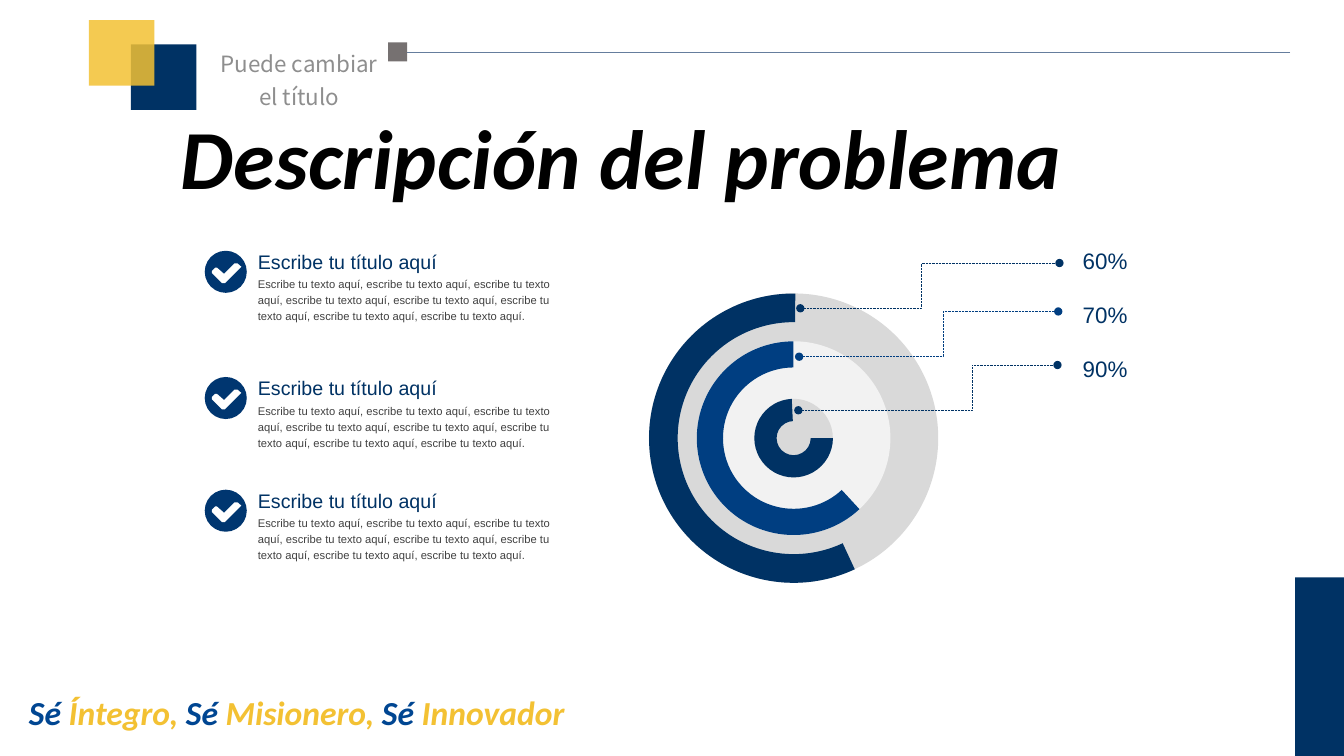
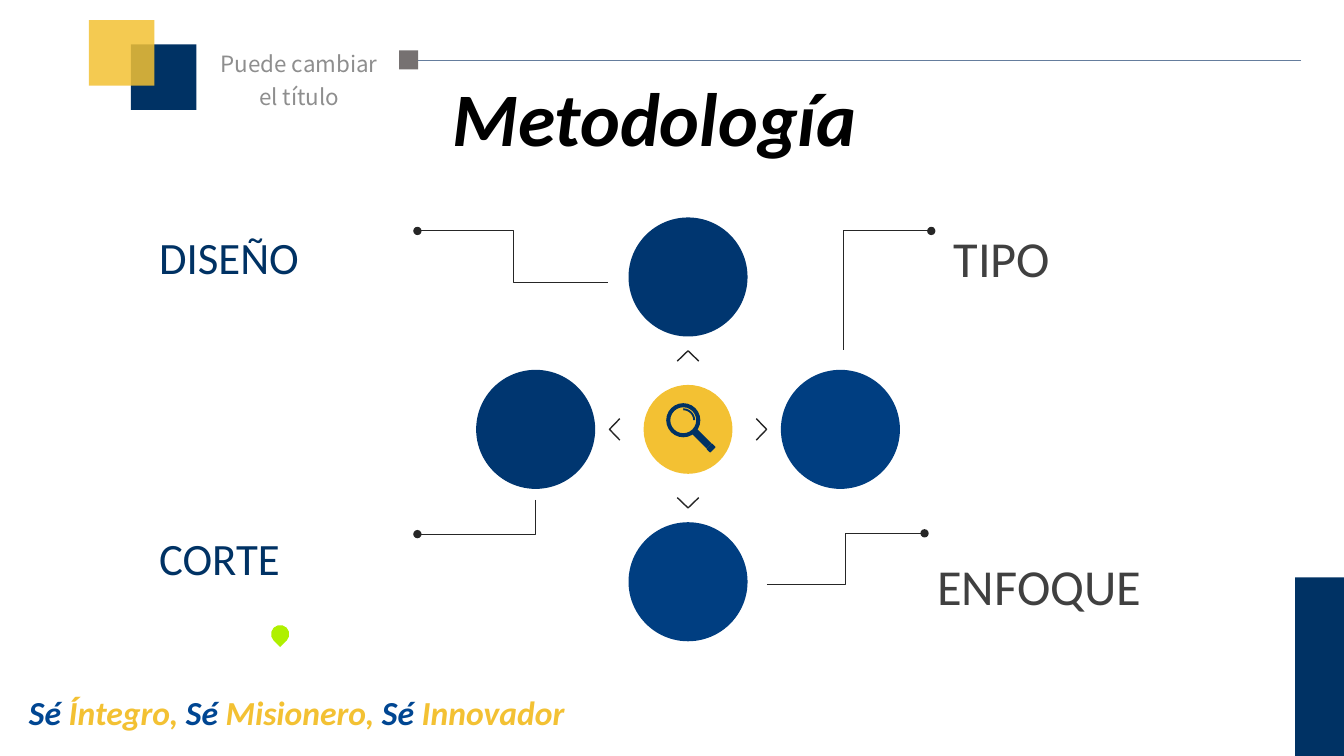
from dataclasses import dataclass

from lxml.etree import SubElement as Sub
from pptx import Presentation as Deck
from pptx.dml.color import RGBColor as Rgb
from pptx.enum.dml import MSO_LINE_DASH_STYLE as Dash
from pptx.enum.shapes import MSO_CONNECTOR as Link, MSO_SHAPE as Kind
from pptx.enum.text import MSO_ANCHOR as Anchor, MSO_AUTO_SIZE as Auto, PP_ALIGN as Align
from pptx.oxml.ns import qn
from pptx.util import Cm, Pt


@dataclass(frozen=True)
class Theme:
    """Colours, fonts and type sizes of the deck."""
    navy: str = "003264"
    deep: str = "003670"
    blue: str = "003E81"
    motto: str = "004692"
    gold: str = "F3C133"
    lime: str = "AFF000"
    white: str = "FFFFFF"
    black: str = "000000"
    ink: str = "262626"
    body: str = "404040"
    stone: str = "767171"
    slate: str = "657D9D"
    mute: str = "8E8E8E"
    mist: str = "D9D9D9"
    pale: str = "F2F2F2"
    main: str = "Calibri"
    plain: str = "Arial"
    soft: str = "Noto Sans CJK SC"
    small: int = 8
    head: int = 14
    note: int = 16
    foot: int = 24
    label: int = 32
    large: int = 36
    title: int = 54
    huge: int = 60


T = Theme()
BOLD = {"bold": True, "italic": True}
GROW = {"auto_size": Auto.SHAPE_TO_FIT_TEXT}
FLUSH = dict.fromkeys(("margin_left", "margin_top", "margin_right", "margin_bottom"), 0)
TIGHT = {**FLUSH, **GROW}
NOWRAP = {"word_wrap": False}
LOW = {"vertical_anchor": Anchor.BOTTOM}
MID = {"alignment": Align.CENTER}
OPEN = {"line_spacing": 1.2}


def apply(obj, form):
    """Set every format value on an object."""
    for name, value in form.items():
        setattr(obj, name, value)


def size(box):
    """Turn a box in centimetres into lengths."""
    return [Cm(n) for n in box]


def paint(part, tone):
    """Give a shape a plain fill without line or shadow."""
    part.shadow.inherit = False
    part.fill.solid()
    part.fill.fore_color.rgb = Rgb.from_string(tone)
    part.line.fill.background()
    return part


def shape(slide, kind, box, tone, adj=(), turn=0):
    """Draw a filled preset shape."""
    part = paint(slide.shapes.add_shape(kind, *size(box)), tone)
    for i, value in enumerate(adj):
        part.adjustments[i] = value
    part.rotation = turn
    return part


def disc(slide, x, y, wide, tone):
    """Draw a circle around a centre."""
    return shape(slide, Kind.OVAL, (x - wide / 2, y - wide / 2, wide, wide), tone)


def text(slide, box, runs, font, para=None, frame=None):
    """Write coloured runs in one paragraph."""
    area = slide.shapes.add_textbox(*size(box)).text_frame
    apply(area, {"word_wrap": True, **(frame or {})})
    line = area.paragraphs[0]
    apply(line, para or {})
    for words, tone in runs:
        run = line.add_run()
        run.text = words
        apply(run.font, font)
        run.font.color.rgb = Rgb.from_string(tone)


def face(name, points, **more):
    """Describe a font."""
    return {"name": name, "size": Pt(points), **more}


def stroke(part, tone, width, ends=()):
    """Style a line and its round ends."""
    part.line.color.rgb = Rgb.from_string(tone)
    part.line.width = Pt(width)
    for end in ends:
        Sub(part.line._get_or_add_ln(), qn("a:" + end), type="oval")


def trace(slide, spots, close=False):
    """Build an outline through points in centimetres."""
    first, *rest = [(Cm(x), Cm(y)) for x, y in spots]
    pen = slide.shapes.build_freeform(*first)
    pen.add_line_segments(rest, close=close)
    part = pen.convert_to_shape()
    part.shadow.inherit = False
    return part


def wire(slide, spots, width, ends=()):
    """Draw an open dark line."""
    part = trace(slide, spots)
    part.fill.background()
    stroke(part, T.ink, width, ends)


def join(slide, kind, start, stop):
    """Add a connector without shadow."""
    link = slide.shapes.add_connector(kind, *size(start + stop))
    Sub(link._element.spPr, qn("a:effectLst"))
    return link


def rule(slide, x, y):
    """Draw the top line with its square."""
    side = 0.48
    line = join(slide, Link.STRAIGHT, (x + 22.73, y + side / 2), (x + side, y + side / 2))
    stroke(line, T.slate, 0.5)
    line.end_connect(shape(slide, Kind.RECTANGLE, (x, y, side, side), T.stone), 3)


def base(deck, spot, title, box, points):
    """Start a slide with the shared parts and its title."""
    slide = deck.slides.add_slide(deck.slide_layouts[6])
    rule(slide, *spot)
    text(slide, (5.33, 1.14, 4.42, 0.91), [("Puede cambiar el título", T.mute)],
         face(T.soft, T.note), {**MID, **OPEN}, FLUSH)
    shape(slide, Kind.RECTANGLE, (3.3, 1.12, 1.65, 1.65), T.navy)
    gold = shape(slide, Kind.RECTANGLE, (2.24, 0.51, 1.65, 1.65), T.gold)
    Sub(next(gold._element.iter(qn("a:srgbClr"))), qn("a:alpha"), val="85000")
    motto = []
    for word in (" Íntegro, ", " Misionero, ", " Innovador"):
        motto += [("Sé", T.motto), (word, T.gold)]
    text(slide, (0.48, 17.3, 14.12, 1.27), motto, face(T.main, T.foot, **BOLD),
         frame={**GROW, **NOWRAP})
    shape(slide, Kind.RECTANGLE, (32.64, 14.55, 1.23, 4.5), T.navy)
    text(slide, box, [(title, T.black)], face(T.main, points, **BOLD),
         {**MID, "line_spacing": 0.9}, LOW)
    return slide


def item(slide, x, y):
    """Place a check badge with heading and text."""
    side = 1.06
    shape(slide, Kind.OVAL, (x, y, side, side), T.deep)
    tick = [(0.87, 0.38), (0.78, 0.3), (0.71, 0.3), (0.46, 0.55), (0.29, 0.4), (0.25, 0.4),
            (0.17, 0.48), (0.17, 0.53), (0.41, 0.77), (0.48, 0.77), (0.83, 0.42)]
    paint(trace(slide, [(x + u * side, y + v * side) for u, v in tick], True), T.white)
    body = ", ".join(["Escribe tu texto aquí"] + ["escribe tu texto aquí"] * 7) + "."
    for dy, wide, high, words, tone, points, wrap in (
            (-0.15, 4.55, 0.66, "Escribe tu título aquí", T.navy, T.head, False),
            (0.61, 7.67, 1.19, body, T.body, T.small, True)):
        text(slide, (x + 1.34, y + dy, wide, high), [(words, tone)], face(T.plain, points),
             {**OPEN, "space_before": Pt(points * 0.2)}, {**TIGHT, "word_wrap": wrap})


def rings(slide, x, y):
    """Draw three progress rings around a centre."""
    rows = ((7.29, T.mist, T.navy, 245, 90.67, 0.099),
            (4.88, T.pale, T.blue, 227.17, 89.84, 0.135),
            (1.98, T.mist, T.navy, 180, 87.28, 0.283))
    for wide, back, *_ in rows:
        disc(slide, x, y, wide, back)
    for wide, _, tone, start, stop, thick in rows:
        shape(slide, Kind.BLOCK_ARC, (x - wide / 2, y - wide / 2, wide, wide), tone,
              (start * 0.6, stop * 0.6, thick), 180)


def marks(slide, x, y):
    """Place the shares and the dotted lines that lead to them."""
    rows = (("60%", 20.17, 7.77, 0.467, T.navy), ("70%", 20.14, 8.99, 0.556, T.blue),
            ("90%", 20.12, 10.34, 0.67, T.navy))
    for i, (share, left, low, bend, tone) in enumerate(rows):
        text(slide, (x, y + 1.36 * i, 1.14, 0.74), [(share, T.navy)], face(T.plain, T.note),
             {**MID, **OPEN, "space_before": Pt(T.note * 0.2)}, {**TIGHT, **NOWRAP, **LOW})
        link = join(slide, Link.ELBOW, (left, low), (left + 6.53, low - 1.14))
        link.line.dash_style = Dash.ROUND_DOT
        stroke(link, tone, 0.5, ("headEnd", "tailEnd"))
        Sub(next(link._element.iter(qn("a:avLst"))), qn("a:gd"),
            name="adj1", fmla=f"val {round(bend * 100000)}")


def lens(slide, x, y):
    """Draw a magnifying glass."""
    shape(slide, Kind.DONUT, (x, y, 0.86, 0.86), T.navy, (0.12,))
    shape(slide, Kind.BLOCK_ARC, (x + 0.13, y + 0.13, 0.6, 0.6), T.navy, (162, 0, 0.08))
    for kind, mid, long, wide in ((Kind.RECTANGLE, 0.9, 0.51, 0.18),
                                  (Kind.ROUNDED_RECTANGLE, 1.13, 0.14, 0.2)):
        shape(slide, kind, (x + mid - long / 2, y + mid - wide / 2, long, wide), T.navy, turn=45)


def hub(slide, x, y):
    """Draw four circles around a core, with arrows and leads."""
    for dx, dy, tone in ((0, -1, T.deep), (1, 0, T.blue), (-1, 0, T.deep), (0, 1, T.blue)):
        disc(slide, x + 3.84 * dx, y + 3.84 * dy, 3, tone)
        wire(slide, [(x + dx * far - dy * off, y + dy * far + dx * off)
                     for far, off in ((1.72, -0.27), (1.98, 0), (1.72, 0.27))], 1)
    disc(slide, x, y, 2.24, T.gold)
    lens(slide, x - 0.55, y - 0.66)
    for lead in (((-2.02, -3.71), (-4.41, -3.71), (-4.41, -5), (-6.82, -5)),
                 ((3.92, -2.01), (3.92, -5), (6.13, -5)),
                 ((1.99, 3.91), (3.98, 3.91), (3.98, 2.62), (5.96, 2.62)),
                 ((-3.85, 1.78), (-3.85, 2.64), (-6.82, 2.64))):
        wire(slide, [(x + u, y + v) for u, v in lead], 0.75, ("tailEnd",))


def labels(slide, x, y):
    """Name the four circles around the centre."""
    for words, dx, dy, tone, points in (
            ("DISEÑO", -13.33, -5.31, T.navy, T.label), ("CORTE", -13.33, 2.29, T.navy, T.label),
            ("TIPO", 6.69, -5.41, T.body, T.large), ("ENFOQUE", 6.28, 2.87, T.body, T.large)):
        text(slide, (x + dx, y + dy, 5.92, points * 0.048), [(words, tone)],
             face(T.main, points), OPEN, TIGHT)
    shape(slide, Kind.TEAR, (x - 10.51, y + 4.93, 0.46, 0.46), T.lime, (1,), 135)


def main():
    """Build and save the deck."""
    deck = Deck()
    apply(deck, {"slide_width": Cm(33.87), "slide_height": Cm(19.05)})
    slide = base(deck, (9.78, 1.07), "Descripción del problema", (4.06, 3.2, 23.19, 2.16), T.huge)
    for top in (6.32, 9.5, 12.34):
        item(slide, 5.16, top)
    rings(slide, 20, 11.04)
    marks(slide, 27.28, 6.17)
    slide = base(deck, (10.06, 1.27), "Metodología", (2.97, 1.35, 27.05, 2.87), T.title)
    hub(slide, 17.34, 10.82)
    labels(slide, 17.34, 10.82)
    deck.save("out.pptx")


if __name__ == "__main__":
    main()
